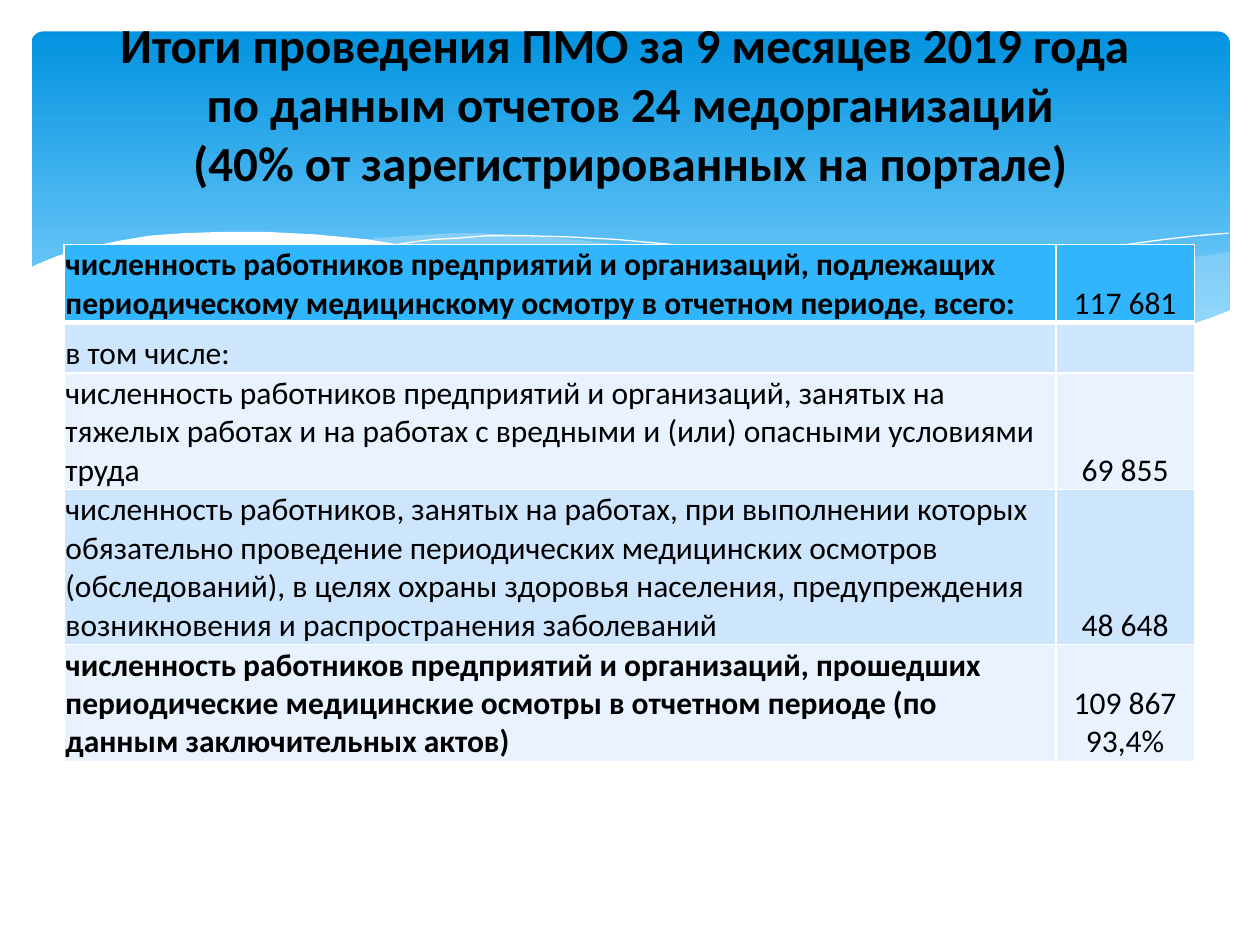
import pptx
import pptx.dml.color
import pptx.enum.shapes
import pptx.enum.text
import pptx.oxml.ns
import pptx.util
from lxml import etree

Inches, Pt = pptx.util.Inches, pptx.util.Pt
RGBColor = pptx.dml.color.RGBColor
ALIGN = pptx.enum.text.PP_ALIGN
ANCHOR = pptx.enum.text.MSO_ANCHOR
qn = pptx.oxml.ns.qn

BLACK = RGBColor(0x00, 0x00, 0x00)
WHITE = RGBColor(0xFF, 0xFF, 0xFF)
SKY_TOP = RGBColor(0x02, 0x93, 0xE0)
SKY_BOTTOM = RGBColor(0x83, 0xD3, 0xFE)
MIST = RGBColor(0xC6, 0xE7, 0xFC)
HEADER = RGBColor(0x31, 0xB6, 0xFD)
BAND_DARK = RGBColor(0xCE, 0xE5, 0xFE)
BAND_LIGHT = RGBColor(0xE8, 0xF3, 0xFF)

TITLE = ("Итоги проведения ПМО за 9 месяцев 2019 года \n"
         "по данным отчетов 24 медорганизаций\n"
         "(40% от зарегистрированных на портале)")

# Table rows: label, value paragraphs, bold label, height
ROWS = [
    ("численность работников предприятий и организаций, подлежащих "
     "периодическому медицинскому осмотру в отчетном периоде, всего:",
     ["117 681"], True, 0.6),
    ("в том числе:", [], False, 0.4),
    ("численность работников предприятий и организаций, занятых на тяжелых "
     "работах и на работах с вредными и (или) опасными условиями труда",
     ["69 855"], False, 0.92),
    ("численность работников, занятых на работах, при выполнении которых "
     "обязательно проведение периодических медицинских осмотров "
     "(обследований), в целях охраны здоровья населения, предупреждения "
     "возникновения и распространения заболеваний",
     ["48 648"], False, 1.2),
    ("численность работников предприятий и организаций, прошедших "
     "периодические медицинские осмотры в отчетном периоде (по данным "
     "заключительных актов)",
     ["109 867", "93,4%"], True, 0.92),
]

# Wave outlines in inches
RIGHT_WAVE = [
    (9.76, 2), (9.48, 2.04), (9.21, 2.1), (8.91, 2.16), (8.61, 2.23),
    (8.05, 2.37), (7.53, 2.48), (7.06, 2.57), (6.61, 2.65), (6.91, 2.69),
    (7.19, 2.72), (7.45, 2.75), (7.69, 2.77), (8.03, 2.78), (8.35, 2.77),
    (8.63, 2.75), (8.89, 2.72), (9.13, 2.67), (9.35, 2.62), (9.49, 2.57),
    (9.63, 2.52), (9.76, 2.47)]
MIDDLE_WAVE = [
    (8.93, 2.73), (8.66, 2.69), (8.37, 2.65), (8.07, 2.6), (7.75, 2.54),
    (7.41, 2.47), (7.06, 2.4), (6.68, 2.31), (6.29, 2.22), (5.98, 2.14),
    (5.69, 2.08), (5.41, 2.03), (5.14, 1.98), (4.89, 1.94), (4.65, 1.91),
    (4.42, 1.89), (4.2, 1.87), (3.99, 1.86), (3.8, 1.85), (3.61, 1.85),
    (3.44, 1.86), (3.28, 1.87), (3.13, 1.88), (2.99, 1.89), (2.86, 1.91),
    (3.23, 1.96), (3.62, 2.03), (4.04, 2.11), (4.49, 2.22), (4.91, 2.32),
    (5.3, 2.4), (5.66, 2.48), (6.01, 2.55), (6.34, 2.61), (6.65, 2.66),
    (6.95, 2.7), (7.22, 2.74), (7.48, 2.76), (7.85, 2.78), (8.28, 2.78),
    (8.57, 2.77), (8.76, 2.75)]
LONG_CREST = [
    (3.09, 1.95), (3.28, 1.92), (3.44, 1.9), (3.63, 1.89), (3.87, 1.87),
    (4.16, 1.87), (4.5, 1.88), (4.89, 1.9), (5.33, 1.94), (5.82, 2),
    (6.36, 2.08), (6.95, 2.19), (7.6, 2.33), (8.31, 2.51), (9.07, 2.72)]
SHORT_CREST = [
    (6.13, 2.57), (6.53, 2.46), (6.95, 2.35), (7.48, 2.23), (8.06, 2.1),
    (8.66, 1.99), (8.95, 1.94), (9.24, 1.9), (9.51, 1.87), (9.75, 1.85)]
FRONT_WAVE = [
    (9.77, 2.46), (9.59, 2.53), (9.4, 2.59), (9.2, 2.65), (8.99, 2.69),
    (8.75, 2.73), (8.5, 2.75), (8.23, 2.77), (7.93, 2.76), (7.61, 2.75),
    (7.26, 2.72), (6.88, 2.68), (6.48, 2.62), (6.03, 2.54), (5.55, 2.45),
    (5.03, 2.33), (4.47, 2.2), (4.18, 2.13), (3.91, 2.07), (3.65, 2.02),
    (3.4, 1.97), (3.16, 1.94), (2.92, 1.9), (2.71, 1.88), (2.5, 1.86),
    (2.3, 1.85), (2.11, 1.84), (1.77, 1.84), (1.46, 1.85), (1.19, 1.87),
    (0.95, 1.91), (0.76, 1.95), (0.59, 1.99), (0.46, 2.03), (0.36, 2.07),
    (0.29, 2.1), (0.23, 2.13), (0.23, 3.29), (9.77, 3.29)]


def write_text(tf, paragraphs, size=18, bold=False, align=ALIGN.LEFT):
    """Fill a text frame; a newline inside a paragraph is a line break."""
    for i, text in enumerate(paragraphs):
        p = tf.add_paragraph() if i else tf.paragraphs[0]
        p.alignment = align
        for j, line in enumerate(text.split("\n")):
            if j:
                p.add_line_break()
            r = p.add_run()
            r.text = line
            r.font.name, r.font.size, r.font.bold = "Calibri", Pt(size), bold
            r.font.color.rgb = BLACK


def add_sky(s):
    sp = s.shapes.add_shape(pptx.enum.shapes.MSO_SHAPE.ROUNDED_RECTANGLE,
                            Inches(0.25), Inches(0.25), Inches(9.51), Inches(2.7))
    sp.adjustments[0] = 0.034
    sp.shadow.inherit = False
    sp.line.fill.background()
    sp.fill.gradient()
    sp.fill.gradient_angle = 270
    stops = zip(sp.fill.gradient_stops, (SKY_TOP, SKY_BOTTOM), (0, 0.9))
    for stop, color, position in stops:
        stop.color.rgb, stop.position = color, position


def add_outline(s, points, fill=None, opacity=100):
    """Draw a filled closed wave, or an open white hairline without a fill."""
    points = [(Inches(x), Inches(y)) for x, y in points]
    builder = s.shapes.build_freeform(*points[0])
    builder.add_line_segments(points[1:], close=fill is not None)
    sp = builder.convert_to_shape()
    sp.shadow.inherit = False
    if fill is None:
        sp.fill.background()
        sp.line.color.rgb, sp.line.width = WHITE, Pt(0)
        return
    sp.line.fill.background()
    sp.fill.solid()
    sp.fill.fore_color.rgb = fill
    if opacity < 100:
        color = sp.element.spPr.find(qn("a:solidFill"))[0]
        etree.SubElement(color, qn("a:alpha"), val=str(opacity * 1000))


def format_cell(cell, fill, top=1, bottom=1):
    cell.vertical_anchor = ANCHOR.BOTTOM
    cell.margin_left = cell.margin_right = cell.margin_top = Inches(0.01)
    cell.margin_bottom = 0
    tc_pr = cell._tc.get_or_add_tcPr()
    for side, width in (("L", 1), ("R", 1), ("T", top), ("B", bottom)):
        ln = etree.SubElement(tc_pr, qn("a:ln" + side), w=str(Pt(width)))
        line_fill = etree.SubElement(ln, qn("a:solidFill"))
        etree.SubElement(line_fill, qn("a:srgbClr"), val=str(WHITE))
    cell.fill.solid()
    cell.fill.fore_color.rgb = fill


def add_results_table(s):
    height = sum(row[-1] for row in ROWS)
    table = s.shapes.add_table(len(ROWS), 2, Inches(0.51), Inches(1.94),
                               Inches(8.98), Inches(height)).table
    table.columns[0].width, table.columns[1].width = Inches(7.87), Inches(1.1)
    for i, (label, values, bold, row_height) in enumerate(ROWS):
        table.rows[i].height = Inches(row_height)
        fill = HEADER if i == 0 else (BAND_LIGHT, BAND_DARK)[i % 2]
        for cell in table.rows[i].cells:
            format_cell(cell, fill, top=3 if i == 1 else 1,
                        bottom=3 if i == 0 else 1)
        write_text(table.cell(i, 0).text_frame, [label], bold=bold)
        write_text(table.cell(i, 1).text_frame, values, align=ALIGN.CENTER)


def add_title(s):
    title = s.shapes.title
    title.left, title.top = Inches(0.5), Inches(-0.11)
    title.width, title.height = Inches(9), Inches(1.85)
    tf = title.text_frame
    tf.word_wrap = True
    tf.auto_size = pptx.enum.text.MSO_AUTO_SIZE.NONE
    tf.vertical_anchor = ANCHOR.MIDDLE
    write_text(tf, [TITLE], size=28, bold=True, align=ALIGN.CENTER)
    s.shapes.element.append(title.element)  # bring to front


def main():
    prs = pptx.Presentation()
    prs.slide_width, prs.slide_height = Inches(10), Inches(7.5)
    s = prs.slides.add_slide(prs.slide_layouts[5])
    # Background sky and waves
    add_sky(s)
    add_outline(s, RIGHT_WAVE, MIST, opacity=29)
    add_outline(s, MIDDLE_WAVE, MIST, opacity=40)
    add_outline(s, LONG_CREST)
    add_outline(s, SHORT_CREST)
    add_outline(s, FRONT_WAVE, WHITE)
    # Content
    add_results_table(s)
    add_title(s)
    prs.save("out.pptx")


if __name__ == "__main__":
    main()
